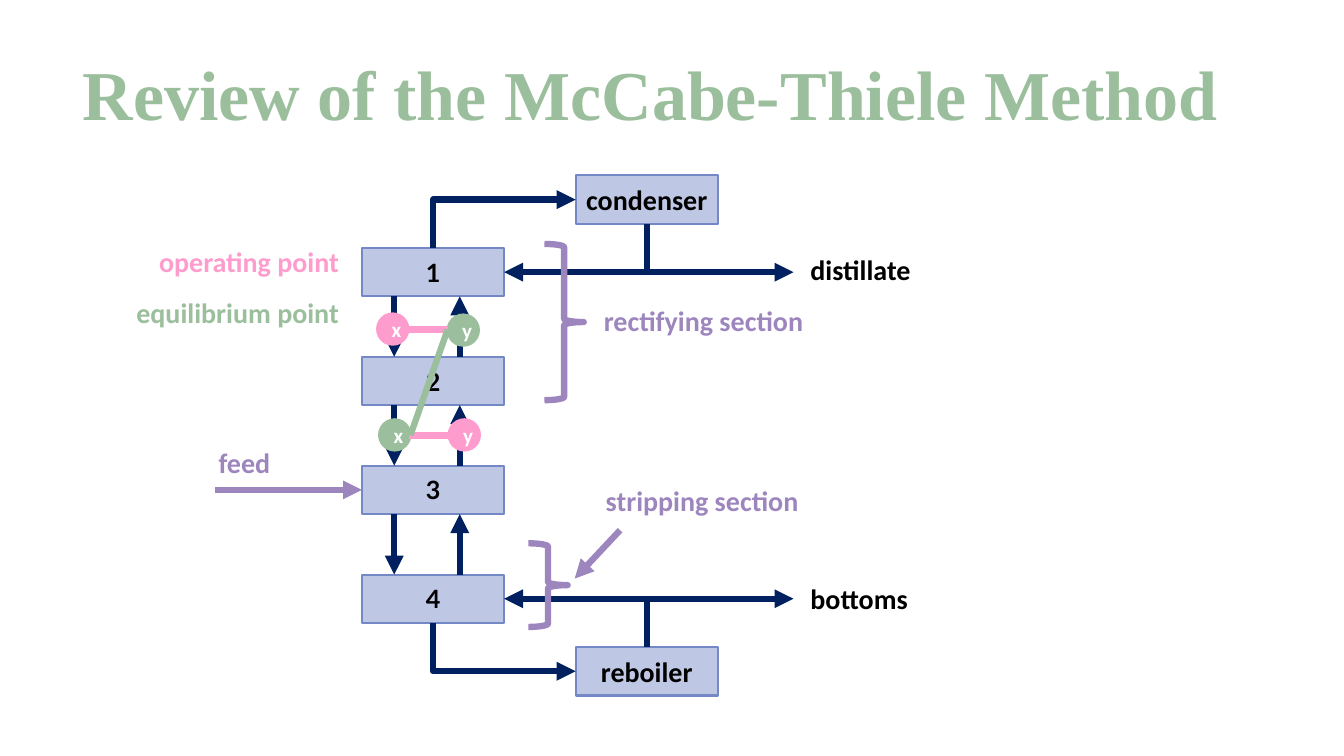
"""Build a slide that reviews the McCabe-Thiele method with a column diagram."""
from lxml import etree
from pptx import Presentation
from pptx import util as u
from pptx.dml.color import RGBColor
from pptx.enum import shapes, text
from pptx.oxml import ns

NAVY, PINK, GREEN, PURPLE = "002060", "FE9CCD", "9BBF9C", "9D85BD"
FILL, EDGE, BLACK, WHITE = "BEC7E4", "7488C6", "000000", "FFFFFF"
LEFT, CENTER, RIGHT = text.PP_ALIGN.LEFT, text.PP_ALIGN.CENTER, text.PP_ALIGN.RIGHT
KIND, WIRE = shapes.MSO_SHAPE, shapes.MSO_CONNECTOR
WIDTH, HEIGHT = 1.41, 0.48
COLUMN, SIDE = 3.59, 5.71
TOP, STEP = 2.46, 1.08
LIQUID, VAPOUR = 3.91, 4.56
DOT = 0.31

deck = Presentation()
deck.slide_width, deck.slide_height = u.Inches(13.33), u.Inches(7.5)
page = deck.slides.add_slide(deck.slide_layouts[5])


def write(box, words, size, colour, align, font="Calibri"):
    """Put one bold line of text in a shape."""
    para = box.text_frame.paragraphs[0]
    para.alignment = align
    span = para.add_run()
    span.text = words
    span.font.color.rgb = RGBColor.from_string(colour)
    for name, value in {"size": u.Pt(size), "bold": True, "name": font}.items():
        setattr(span.font, name, value)


def link(start, end, colour, arrow="tailEnd", kind=WIRE.STRAIGHT):
    """Draw a thick line from start to end, with an optional arrowhead."""
    wire = page.shapes.add_connector(kind, *[u.Inches(n) for n in (*start, *end)])
    wire.line.color.rgb = RGBColor.from_string(colour)
    wire.line.width = u.Pt(4.5)
    properties = wire._element.spPr
    if arrow:
        etree.SubElement(properties.find(ns.qn("a:ln")), ns.qn(f"a:{arrow}"), type="triangle")
    etree.SubElement(properties, ns.qn("a:effectLst"))
    return wire


title = page.shapes.title
for name, value in {"left": 0.72, "top": 0.33, "width": 11.95, "height": 1.29}.items():
    setattr(title, name, u.Inches(value))
for name, value in {"vertical_anchor": text.MSO_ANCHOR.MIDDLE, "word_wrap": True,
                    "auto_size": text.MSO_AUTO_SIZE.NONE}.items():
    setattr(title.text_frame, name, value)
write(title, "Review of the McCabe-Thiele Method", 50, GREEN, LEFT, "Times New Roman")
title.text_frame.paragraphs[0].line_spacing = 0.9

units = {}
stages = [(str(row + 1), COLUMN, TOP + row * STEP, 18, "Lato") for row in range(4)]
vessels = [("condenser", SIDE, 1.74, 20, "Calibri"), ("reboiler", SIDE, 6.42, 20, "Calibri")]
for words, left, top, size, font in stages + vessels:
    box = page.shapes.add_shape(KIND.RECTANGLE, *[u.Inches(n) for n in (left, top, WIDTH, HEIGHT)])
    box.shadow.inherit = False
    box.fill.solid()
    box.fill.fore_color.rgb = RGBColor.from_string(FILL)
    box.line.color.rgb = RGBColor.from_string(EDGE)
    box.line.width = u.Pt(1.5)
    write(box, words, size, BLACK, CENTER, font)
    units[words] = box

for begin, begin_side, end, end_side in [
    ("reboiler", 1, "4", 2), ("condenser", 1, "1", 0),
    ("1", 3, "condenser", 2), ("4", 3, "reboiler", 0),
]:
    elbow = link((0, 0), (1, 1), NAVY, "headEnd", WIRE.ELBOW)
    elbow._element.spPr.find(ns.qn("a:prstGeom")).set("prst", "bentConnector2")
    elbow.begin_connect(units[begin], begin_side)
    elbow.end_connect(units[end], end_side)

for row, product in ((0, "distillate"), (3, "bottoms")):
    middle = TOP + row * STEP + HEIGHT / 2
    link((SIDE + WIDTH / 2, middle), (7.87, middle), NAVY)

for row in range(3):
    upper, lower = TOP + row * STEP + HEIGHT, TOP + (row + 1) * STEP
    link((LIQUID, upper), (LIQUID, lower), NAVY)
    link((VAPOUR, lower), (VAPOUR, upper), NAVY)

feed = link((2.13, TOP + 2 * STEP + HEIGHT / 2), (COLUMN, 4.86), PURPLE)
feed.end_connect(units["3"], 1)

for words, left, top, colour in [
    ("x", 3.74, 3.11, PINK), ("y", 4.44, 3.12, GREEN),
    ("x", 3.76, 4.16, GREEN), ("y", 4.45, 4.16, PINK),
]:
    dot = page.shapes.add_shape(KIND.OVAL, *[u.Inches(n) for n in (left, top, DOT, DOT)])
    dot.shadow.inherit = False
    dot.fill.solid()
    dot.fill.fore_color.rgb = RGBColor.from_string(colour)
    dot.line.color.rgb = RGBColor.from_string(colour)
    dot.line.width = u.Pt(1.5)
    write(dot, words, 15, WHITE, CENTER)

for start, end, colour in [
    ((4.05, 3.27), (4.44, 3.27), PINK),
    ((4.06, 4.32), (4.45, 4.32), PINK),
    ((4.07, 4.32), (4.44, 3.27), GREEN),
]:
    link(start, end, colour, None)

for left, top, height in ((5.4, 2.42, 1.55), (5.24, 5.39, 0.83)):
    brace = page.shapes.add_shape(KIND.RIGHT_BRACE, *[u.Inches(n) for n in (left, top, 0.39, height)])
    brace.shadow.inherit = False
    brace.fill.background()
    brace.line.color.rgb = RGBColor.from_string(PURPLE)
    brace.line.width = u.Pt(4.5)

link((6.15, 5.26), (5.7, 5.74), PURPLE)

for words, left, top, width, colour, align in [
    ("distillate", 7.94, 2.46, 1.5, BLACK, LEFT),
    ("bottoms", 7.94, 5.72, 1.5, BLACK, LEFT),
    ("feed", 2.07, 4.37, 0.8, PURPLE, LEFT),
    ("operating point", 1.17, 2.38, 2.29, PINK, RIGHT),
    ("equilibrium point", 0.09, 2.88, 3.37, GREEN, RIGHT),
    ("rectifying section", 5.89, 2.96, 3.37, PURPLE, LEFT),
    ("stripping section", 5.91, 4.75, 3.37, PURPLE, LEFT),
]:
    label = page.shapes.add_textbox(*[u.Inches(n) for n in (left, top, width, 0.44)])
    label.text_frame.word_wrap = True
    write(label, words, 20, colour, align)

deck.save("out.pptx")
